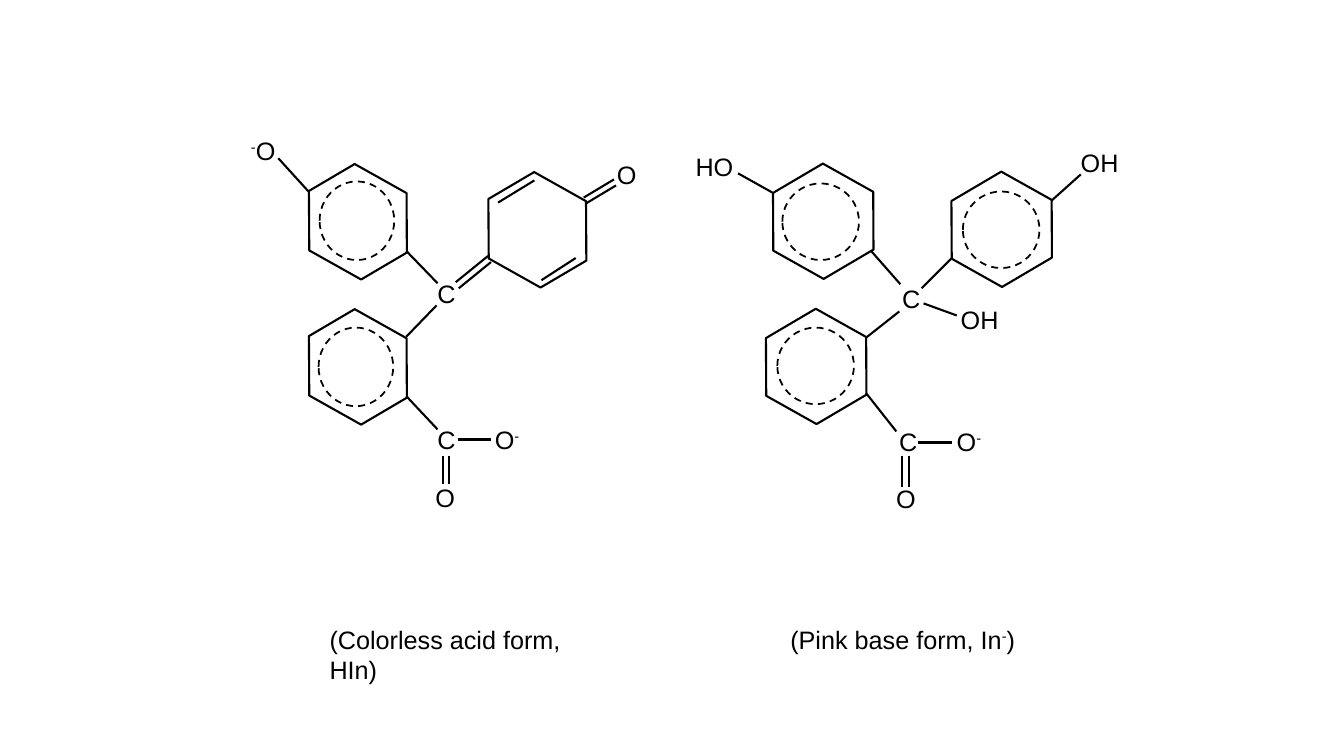
from lxml.etree import SubElement
from pptx import Presentation
from pptx.dml.color import RGBColor
from pptx.enum.dml import MSO_LINE
from pptx.enum.shapes import MSO_CONNECTOR, MSO_SHAPE
from pptx.enum.text import MSO_AUTO_SIZE
from pptx.oxml.ns import qn
from pptx.util import Cm, Pt

BLACK = RGBColor(0, 0, 0)
LABEL_HEIGHT = 0.4

# Each molecule lists its parts in inches:
# rings (left, top), circles (left, top), atoms (text, left, top, width),
# bonds (x1, y1, x2, y2), double bonds (x1, y1, x2, y2, dx, dy).
ACID = {
    "ring_size": (1.12, 1.02),
    "rings": [(2.99, 1.69), (2.99, 3.13), (4.77, 1.77)],
    "circle_size": (0.74, 0.78),
    "circles": [(3.17, 1.8), (3.16, 3.25)],
    "atoms": [
        ("^-^O", 2.39, 1.29, 0.45),
        ("O", 6.02, 1.53, 0.4),
        ("C", 4.24, 2.71, 0.38),
        ("C", 4.24, 4.16, 0.39),
        ("O", 4.22, 4.74, 0.4),
        ("O^-^", 4.81, 4.16, 0.45),
    ],
    "bonds": [
        (3.06, 1.9, 2.76, 1.57),
        (4.03, 2.49, 4.34, 2.81),
        (4.33, 3.03, 4.03, 3.34),
        (4.03, 3.93, 4.34, 4.26),
        (5.3, 1.79, 4.94, 2.01),
        (5.71, 2.56, 5.37, 2.78),
        (4.54, 4.36, 4.87, 4.36),
    ],
    "double_bonds": [
        (4.84, 2.54, 4.52, 2.8, 0.03, 0.06),
        (6.09, 1.78, 5.79, 1.96, 0.02, 0.06),
        (4.39, 4.52, 4.39, 4.8, 0.06, 0),
    ],
}
BASE = {
    "ring_size": (1.15, 0.99),
    "rings": [(7.52, 3.14), (7.59, 1.7), (9.36, 1.78)],
    "circle_size": (0.76, 0.76),
    "circles": [(7.71, 3.25), (7.76, 1.82), (9.55, 1.9)],
    "atoms": [
        ("OH", 10.62, 1.41, 0.58),
        ("OH", 9.43, 2.97, 0.58),
        ("HO", 6.8, 1.45, 0.58),
        ("C", 8.85, 2.76, 0.38),
        ("C", 8.82, 4.18, 0.38),
        ("O", 8.79, 4.75, 0.4),
        ("O^-^", 9.39, 4.18, 0.45),
    ],
    "bonds": [
        (8.64, 2.49, 8.93, 2.82),
        (8.92, 3.09, 8.59, 3.35),
        (9.44, 2.56, 9.14, 2.86),
        (9.16, 3.01, 9.49, 3.13),
        (9.1, 4.39, 9.44, 4.39),
        (8.89, 4.28, 8.59, 3.9),
        (7.32, 1.72, 7.66, 1.91),
        (10.72, 1.73, 10.43, 1.99),
    ],
    "double_bonds": [(8.95, 4.52, 8.95, 4.83, 0.07, 0)],
}


def lengths(*inches):
    return [Cm(2.54 * v) for v in inches]


class Drawing:
    """Draws on one slide; `shapes` is the slide or the group in progress."""

    font, size, color = "Arial", Pt(18), BLACK

    def __init__(self, slide):
        self.slide = slide
        self.shapes = slide.shapes

    def outline(self, kind, left, top, size, width):
        sp = self.shapes.add_shape(kind, *lengths(left, top, *size))
        sp.shadow.inherit = False
        sp.fill.background()
        sp.line.color.rgb = self.color
        sp.line.width = Pt(width)
        return sp

    def ring(self, left, top, size):
        sp = self.outline(MSO_SHAPE.HEXAGON, left, top, size, 1.5)
        sp.adjustments[0] = 0.291
        sp.rotation = 329.5

    def circle(self, left, top, size):
        sp = self.outline(MSO_SHAPE.OVAL, left, top, size, 1.25)
        sp.line.dash_style = MSO_LINE.DASH

    def bond(self, x1, y1, x2, y2):
        line = self.shapes.add_connector(
            MSO_CONNECTOR.STRAIGHT, *lengths(x1, y1, x2, y2))
        line.line.color.rgb = self.color
        line.line.width = Pt(1.5)
        SubElement(line._element.spPr, qn("a:effectLst"))

    def double_bond(self, x1, y1, x2, y2, dx, dy):
        self.bond(x1, y1, x2, y2)
        self.bond(x1 + dx, y1 + dy, x2 + dx, y2 + dy)

    def label(self, text, left, top, width):
        """Add a text box; parts between ^ signs are raised."""
        tf = self.shapes.add_textbox(
            *lengths(left, top, width, LABEL_HEIGHT)).text_frame
        tf.word_wrap = False
        tf.auto_size = MSO_AUTO_SIZE.SHAPE_TO_FIT_TEXT
        p = tf.paragraphs[0]
        p.font.name = self.font
        p.font.size = self.size
        p.font.color.rgb = self.color
        for i, part in enumerate(text.split("^")):
            if part:
                r = p.add_run()
                r.text = part
                if i % 2:
                    r._r.get_or_add_rPr().set("baseline", "30000")

    def molecule(self, parts):
        self.shapes = self.slide.shapes.add_group_shape().shapes
        for place in parts["rings"]:
            self.ring(*place, parts["ring_size"])
        for place in parts["circles"]:
            self.circle(*place, parts["circle_size"])
        for atom in parts["atoms"]:
            self.label(*atom)
        for ends in parts["bonds"]:
            self.bond(*ends)
        for ends in parts["double_bonds"]:
            self.double_bond(*ends)
        self.shapes = self.slide.shapes


def main():
    prs = Presentation()
    prs.slide_width, prs.slide_height = lengths(13.33, 7.5)
    s = prs.slides.add_slide(prs.slide_layouts[6])
    drawing = Drawing(s)
    drawing.molecule(ACID)
    drawing.label("(Colorless acid form, HIn)", 3.17, 6.14, 3.03)
    drawing.label("(Pink base form, In^-^)", 7.74, 6.14, 2.44)
    drawing.molecule(BASE)
    prs.save("out.pptx")


if __name__ == "__main__":
    main()
